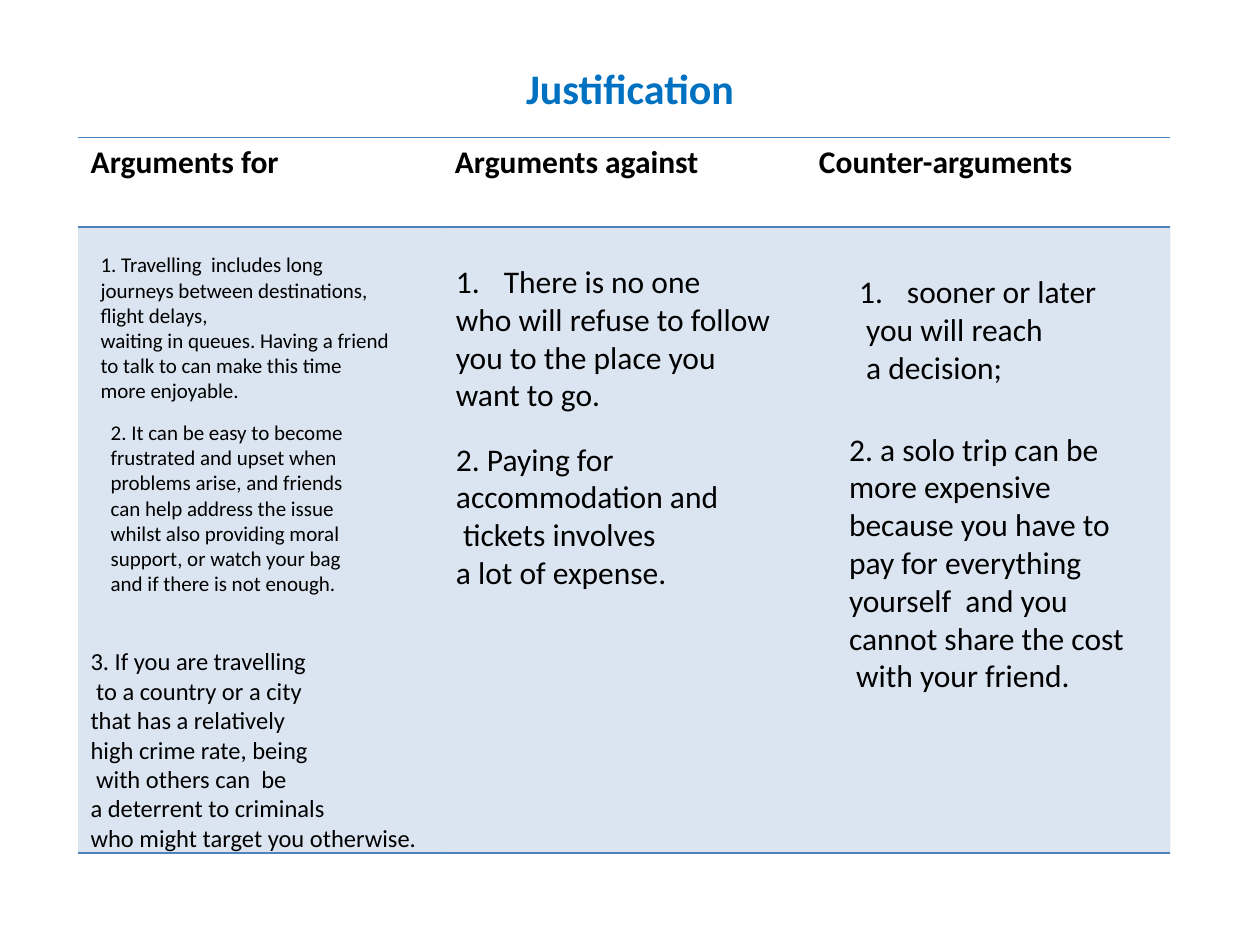
"""Build the Justification slide: a three-column table of arguments with text boxes."""
from dataclasses import dataclass

from lxml import etree
from pptx import Presentation
from pptx import util as u
from pptx.dml.color import RGBColor
from pptx.enum import text
from pptx.oxml.ns import qn


@dataclass(frozen=True)
class Theme:
    font: str = "Calibri"
    title: str = "0070C0"
    ink: str = "000000"
    accent: str = "4F81BD"
    tint: int = 20000
    title_size: int = 24
    large: int = 18
    medium: int = 14
    small: int = 12
    no_grid_style: str = "{2D5ABB26-0587-4C30-8999-92F81FD0307C}"


@dataclass(frozen=True)
class Argument:
    left: float
    top: float
    width: float
    height: float
    size: int
    lines: tuple[str, ...]
    wrap: bool = True
    numbered: bool = False
    hanging: bool = False


THEME = Theme()
HEADINGS = ("Arguments for", "Arguments against", "Counter-arguments")
COLUMN_WIDTH = 2.89
ROW_HEIGHTS = (0.71, 4.97)
HANG = 0.38
ARGUMENTS = (
    Argument(0.7, 1.95, 2.5, 1.31, THEME.small, (
        "1. Travelling  includes long journeys between destinations, flight delays,",
        "waiting in queues. Having a friend to talk to can make this time more enjoyable.")),
    Argument(0.78, 3.28, 2.11, 1.51, THEME.small, (
        "2. It can be easy to become frustrated and upset when problems arise, and friends "
        "can help address the issue whilst also providing moral support, or watch your bag "
        "and if there is not enough.",)),
    Argument(0.62, 5.08, 3.05, 1.75, THEME.medium, (
        "3. If you are travelling", " to a country or a city", "that has a relatively",
        "high crime rate, being", " with others can  be", "a deterrent to criminals",
        "who might target you otherwise.")),
    Argument(3.52, 2.03, 2.73, 1.31, THEME.large, (
        "There is no one", "who will refuse to follow you to the place you",
        "want to go."), numbered=True),
    Argument(3.52, 3.44, 2.31, 1.62, THEME.large, (
        "2. Paying for", "accommodation and", " tickets involves",
        "a lot of expense."), wrap=False),
    Argument(6.72, 2.11, 2.1, 1.01, THEME.large, (
        "sooner or later", " you will reach", " a decision;"),
        wrap=False, numbered=True, hanging=True),
    Argument(6.64, 3.36, 2.41, 2.22, THEME.large, (
        "2. a solo trip can be", "more expensive", "because you have to",
        "pay for everything", "yourself  and you", "cannot share the cost",
        " with your friend."), wrap=False, hanging=True),
)


def format_text(frame, size: int, color: str = THEME.ink, bold: bool = False) -> None:
    """Give every run of a text frame the same font."""
    for para in frame.paragraphs:
        for span in para.runs:
            span.font.name = THEME.font
            span.font.size = u.Pt(size)
            span.font.bold = bold
            span.font.color.rgb = RGBColor.from_string(color)


def add_title(page) -> None:
    """Place and format the slide title."""
    title = page.shapes.title
    title.left, title.top = u.Inches(0.5), u.Inches(0.3)
    title.width, title.height = u.Inches(9), u.Inches(0.79)
    frame = title.text_frame
    frame.text = "Justification"
    frame.vertical_anchor = text.MSO_ANCHOR.MIDDLE
    frame.paragraphs[0].alignment = text.PP_ALIGN.CENTER
    format_text(frame, THEME.title_size, THEME.title, bold=True)


def add_borders(cell, sides: tuple[str, ...]) -> None:
    """Draw accent borders on the named sides of a cell."""
    properties = cell._tc.get_or_add_tcPr()
    for index, side in enumerate(sides):
        line = etree.Element(qn(f"a:{side}"), w=str(u.Pt(1)))
        fill = etree.SubElement(line, qn("a:solidFill"))
        etree.SubElement(fill, qn("a:srgbClr"), val=THEME.accent)
        properties.insert(index, line)


def tint_cell(cell) -> None:
    """Fill a cell with the translucent accent colour."""
    cell.fill.solid()
    cell.fill.fore_color.rgb = RGBColor.from_string(THEME.accent)
    color = cell._tc.tcPr.find(f"{qn('a:solidFill')}/{qn('a:srgbClr')}")
    etree.SubElement(color, qn("a:alpha"), val=str(THEME.tint))


def add_argument_table(page) -> None:
    """Add the headed table behind the arguments."""
    table = page.shapes.add_table(
        len(ROW_HEIGHTS), len(HEADINGS), u.Inches(0.62), u.Inches(1.09),
        u.Inches(COLUMN_WIDTH * len(HEADINGS)), u.Inches(sum(ROW_HEIGHTS))).table
    table.horz_banding = False
    table._tbl.tblPr.find(qn("a:tableStyleId")).text = THEME.no_grid_style
    for row, height in zip(table.rows, ROW_HEIGHTS):
        row.height = u.Inches(height)
    for index, heading in enumerate(HEADINGS):
        table.columns[index].width = u.Inches(COLUMN_WIDTH)
        header, body = table.cell(0, index), table.cell(1, index)
        header.text_frame.text = heading
        format_text(header.text_frame, THEME.large, bold=True)
        header.fill.background()
        tint_cell(body)
        add_borders(header, ("lnT", "lnB"))
        add_borders(body, ("lnT", "lnB"))


def add_argument(page, argument: Argument) -> None:
    """Add one argument as a text box."""
    box = page.shapes.add_textbox(*map(u.Inches, (
        argument.left, argument.top, argument.width, argument.height)))
    frame = box.text_frame
    frame.text = "\n".join(argument.lines)
    frame.word_wrap = argument.wrap
    frame.auto_size = text.MSO_AUTO_SIZE.SHAPE_TO_FIT_TEXT
    format_text(frame, argument.size)
    for index, para in enumerate(frame.paragraphs):
        numbered = argument.numbered and index == 0
        if numbered or argument.hanging:
            properties = para._p.get_or_add_pPr()
            properties.set("marL", str(u.Inches(HANG)))
            properties.set("indent", str(-u.Inches(HANG)))
            if numbered:
                etree.SubElement(properties, qn("a:buAutoNum"), type="arabicPeriod")


def main() -> None:
    """Build and save the deck."""
    deck = Presentation()
    deck.slide_width, deck.slide_height = u.Inches(10), u.Inches(7.5)
    page = deck.slides.add_slide(deck.slide_layouts[5])
    add_title(page)
    add_argument_table(page)
    for argument in ARGUMENTS:
        add_argument(page, argument)
    deck.save("out.pptx")


if __name__ == "__main__":
    main()
